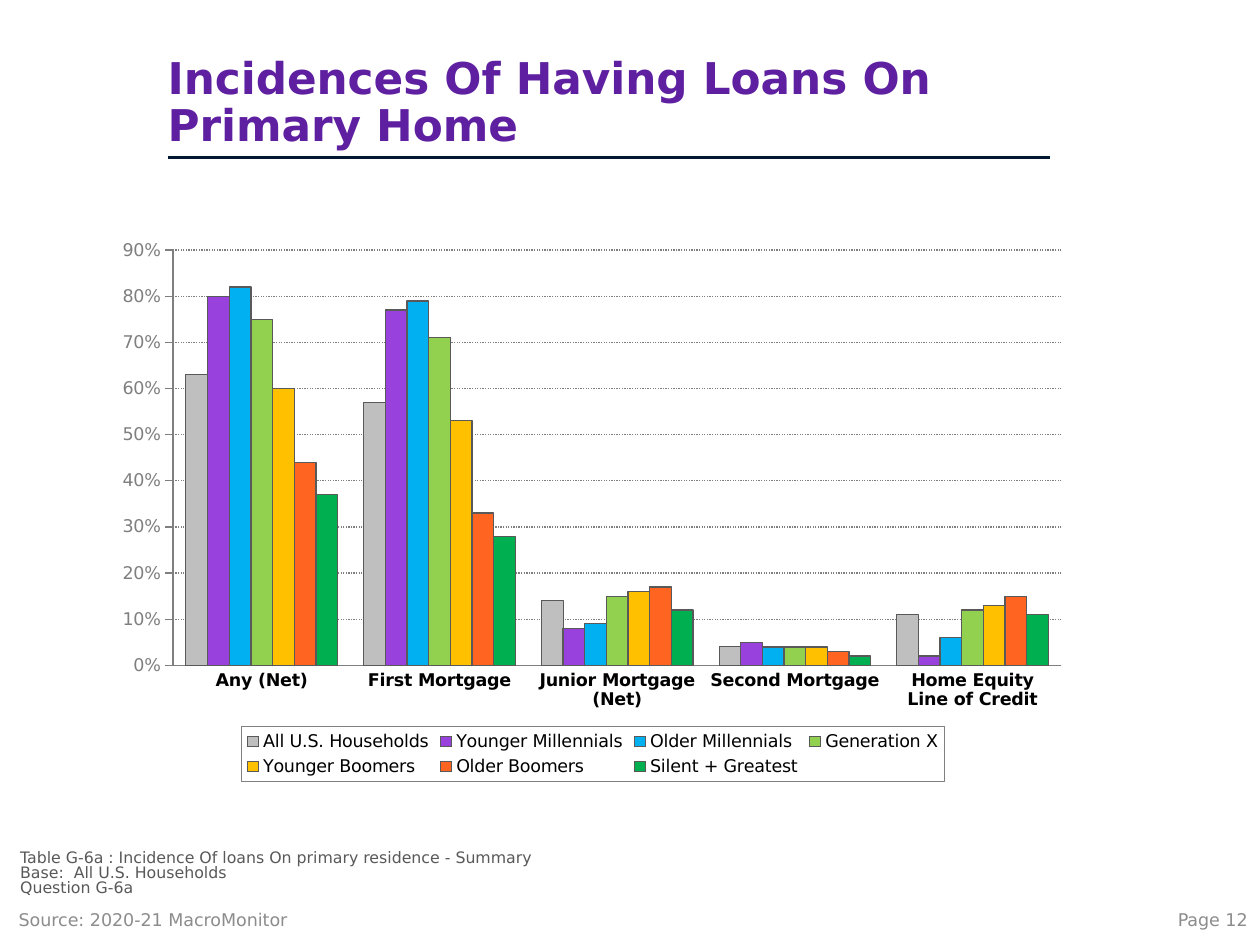
"""Build a slide with a clustered column chart of home loan incidence by generation."""
import pptx
import pptx.chart.data
import pptx.dml.color
import pptx.enum.chart
import pptx.enum.dml
import pptx.enum.shapes
import pptx.enum.text
import pptx.oxml
import pptx.oxml.ns
import pptx.util

Inches, Pt = pptx.util.Inches, pptx.util.Pt
ANCHOR, ALIGN = pptx.enum.text.MSO_ANCHOR, pptx.enum.text.PP_ALIGN
FONT = "DejaVu Sans"
GRAY = "7F7F7F"
FOOTER_GRAY = "8C8C8C"
CATEGORIES = ["Any (Net)", "First Mortgage", "Junior Mortgage (Net)",
              "Second Mortgage", "Home Equity Line of Credit"]
SERIES = [
    ("All U.S. Households", "BFBFBF", [0.63, 0.57, 0.14, 0.04, 0.11]),
    ("Younger Millennials", "9941DD", [0.8, 0.77, 0.08, 0.05, 0.02]),
    ("Older Millennials", "00B0F0", [0.82, 0.79, 0.09, 0.04, 0.06]),
    ("Generation X", "92D050", [0.75, 0.71, 0.15, 0.04, 0.12]),
    ("Younger Boomers", "FFC000", [0.6, 0.53, 0.16, 0.04, 0.13]),
    ("Older Boomers", "FF6521", [0.44, 0.33, 0.17, 0.03, 0.15]),
    ("Silent + Greatest", "00B050", [0.37, 0.28, 0.12, 0.02, 0.11]),
]


def rgb(color):
    """Turn a hex string into a colour."""
    return pptx.dml.color.RGBColor.from_string(color)


def style_font(font, size, color, bold=False):
    """Set the face, size, colour and weight of a font."""
    font.name, font.size, font.bold = FONT, Pt(size), bold
    font.color.rgb = rgb(color)


def style_line(line, color, width):
    """Set the colour and width of a line."""
    line.color.rgb = rgb(color)
    line.width = Pt(width)


def place(sp, left, top, width, height):
    """Move and size a shape, in inches."""
    sp.left, sp.top = Inches(left), Inches(top)
    sp.width, sp.height = Inches(width), Inches(height)


def fill_text(tf, text, size, color, bold=False, spacing=1.0,
              align=ALIGN.LEFT, anchor=ANCHOR.MIDDLE):
    """Write the text into a frame and format every paragraph."""
    tf.text = text
    tf.word_wrap = True
    tf.vertical_anchor = anchor
    for p in tf.paragraphs:
        p.alignment, p.line_spacing = align, spacing
        for r in p.runs:
            style_font(r.font, size, color, bold)


def add_title(s, text):
    """Fill the title placeholder and draw the rule below it."""
    sp = s.shapes.title
    place(sp, 1.33, 0.4, 7, 0.85)
    tf = sp.text_frame
    tf.auto_size = pptx.enum.text.MSO_AUTO_SIZE.NONE
    tf.margin_left = tf.margin_right = 0
    fill_text(tf, text, 25, "5E20A0", bold=True, spacing=0.9, anchor=ANCHOR.BOTTOM)
    rule = s.shapes.add_connector(
        pptx.enum.shapes.MSO_CONNECTOR.STRAIGHT,
        Inches(1.33), Inches(1.25), Inches(8.33), Inches(1.25))
    style_line(rule.line, "00192F", 2)
    rule._element.spPr.append(pptx.oxml.parse_xml(
        f'<a:effectLst {pptx.oxml.ns.nsdecls("a")}/>'))


def add_text(s, box, text, size, color, **options):
    """Add a text box and return its frame."""
    tf = s.shapes.add_textbox(*map(Inches, box)).text_frame
    fill_text(tf, text, size, color, **options)
    return tf


def set_layout(parent, index, x, y, w, h, inner=False):
    """Give a chart part a manual layout in fractions of the chart."""
    for old in parent.findall(pptx.oxml.ns.qn("c:layout")):
        parent.remove(old)
    target = '<c:layoutTarget val="inner"/>' if inner else ""
    parent.insert(index, pptx.oxml.parse_xml(
        f'<c:layout {pptx.oxml.ns.nsdecls("c")}><c:manualLayout>{target}'
        '<c:xMode val="edge"/><c:yMode val="edge"/>'
        f'<c:x val="{x}"/><c:y val="{y}"/><c:w val="{w}"/><c:h val="{h}"/>'
        '</c:manualLayout></c:layout>'))


def style_axes(chart):
    """Format both axes and the gridlines."""
    cat, val = chart.category_axis, chart.value_axis
    tick = pptx.enum.chart.XL_TICK_MARK
    for axis, mark, color, bold in ((cat, tick.NONE, "000000", True),
                                    (val, tick.OUTSIDE, GRAY, False)):
        axis.major_tick_mark, axis.minor_tick_mark = mark, tick.NONE
        style_font(axis.tick_labels.font, 10, color, bold)
        style_line(axis.format.line, GRAY, 0.75)
    cat.has_major_gridlines = False
    val.minimum_scale, val.maximum_scale, val.major_unit = 0, 0.9, 0.1
    val.tick_labels.number_format = "0%"
    val.tick_labels.number_format_is_linked = False
    val.has_major_gridlines = True
    grid = val.major_gridlines.format.line
    style_line(grid, GRAY, 0.75)
    grid.dash_style = pptx.enum.dml.MSO_LINE.ROUND_DOT


def add_legend(chart):
    """Put a framed legend below the plot."""
    chart.has_legend = True
    legend = chart.legend
    legend.position = pptx.enum.chart.XL_LEGEND_POSITION.BOTTOM
    legend.include_in_layout = False
    style_font(legend.font, 10, "000000")
    element = legend._element
    set_layout(element, 1, 0.14, 0.9, 0.72, 0.1)
    element.find(pptx.oxml.ns.qn("c:overlay")).addnext(pptx.oxml.parse_xml(
        f'<c:spPr {pptx.oxml.ns.nsdecls("c", "a")}><a:ln w="{Pt(0.75)}"><a:solidFill>'
        f'<a:srgbClr val="{GRAY}"/></a:solidFill></a:ln></c:spPr>'))


def add_loan_chart(s):
    """Add the column chart of loan incidence."""
    data = pptx.chart.data.CategoryChartData(number_format="0%")
    data.categories = CATEGORIES
    for name, _, values in SERIES:
        data.add_series(name, values)
    chart = s.shapes.add_chart(
        pptx.enum.chart.XL_CHART_TYPE.COLUMN_CLUSTERED,
        Inches(0.83), Inches(1.81), Inches(7.75), Inches(4.4), data).chart
    chart.has_title = False
    style_font(chart.font, 10, "000000")
    plot = chart.plots[0]
    plot.gap_width, plot.overlap, plot.vary_by_categories = 120, 0, False
    for i, (series, (_, color, _)) in enumerate(zip(plot.series, SERIES)):
        series.format.fill.solid()
        series.format.fill.fore_color.rgb = rgb(color)
        series.invert_if_negative = False
        style_line(series.format.line, "595959", 0.75 if i else 0.5)
    style_axes(chart)
    add_legend(chart)
    plot_area = chart._chartSpace.chart.plotArea
    set_layout(plot_area, 0, 0.07, 0.04, 0.91, 0.75, inner=True)


def main():
    """Build and save the slide."""
    prs = pptx.Presentation()
    prs.slide_width, prs.slide_height = Inches(10), Inches(7.5)
    s = prs.slides.add_slide(prs.slide_layouts[5])
    add_title(s, "Incidences Of Having Loans On Primary Home")
    add_text(s, (0.05, 7.1, 3.33, 0.4), "Source: 2020-21 MacroMonitor", 10, FOOTER_GRAY)
    tf = add_text(
        s, (0.16, 6.76, 9.71, 0.36),
        "Table G-6a : Incidence Of loans On primary residence - Summary\n"
        "Base:  All U.S. Households\nQuestion G-6a",
        9, "595959", spacing=0.8, anchor=ANCHOR.BOTTOM)
    tf.margin_left = tf.margin_right = tf.margin_top = tf.margin_bottom = 0
    tf.auto_size = pptx.enum.text.MSO_AUTO_SIZE.SHAPE_TO_FIT_TEXT
    add_text(s, (7.75, 7.1, 2.25, 0.4), "Page 12", 10, FOOTER_GRAY, align=ALIGN.RIGHT)
    add_loan_chart(s)
    prs.save("out.pptx")


if __name__ == "__main__":
    main()
